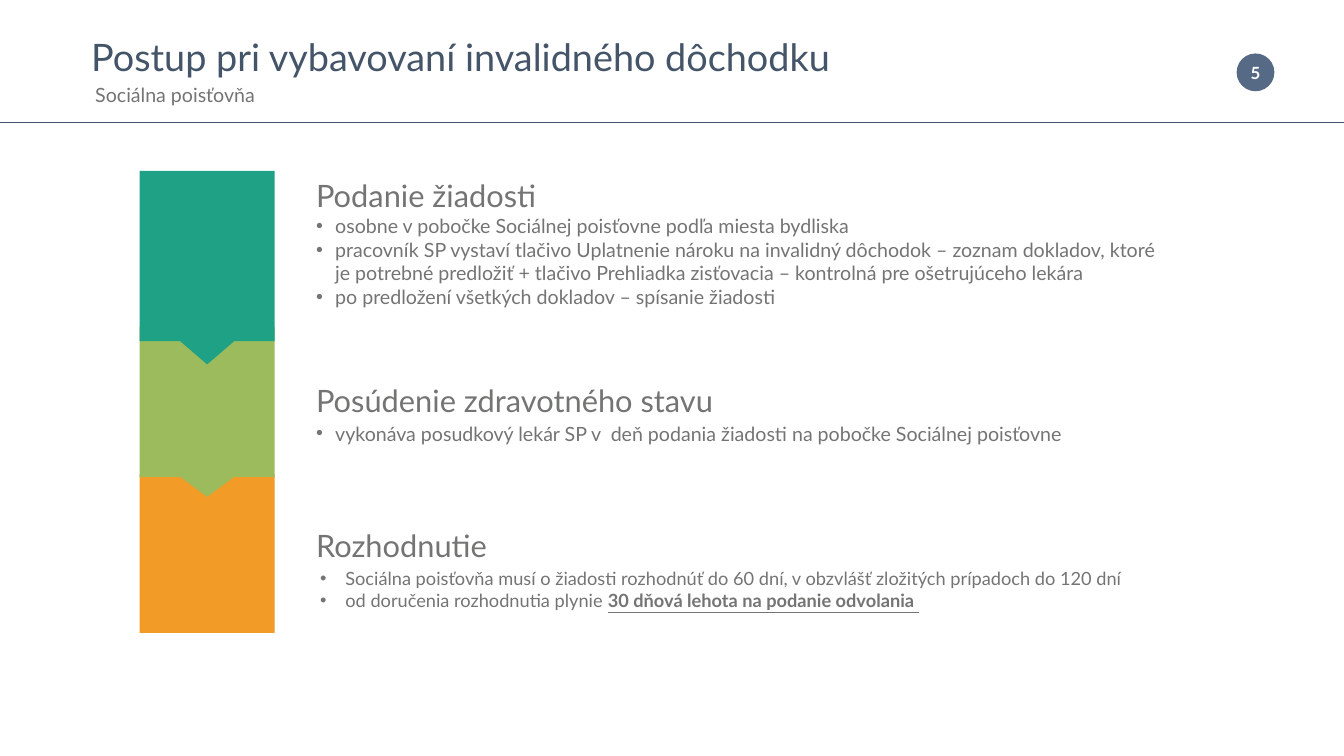
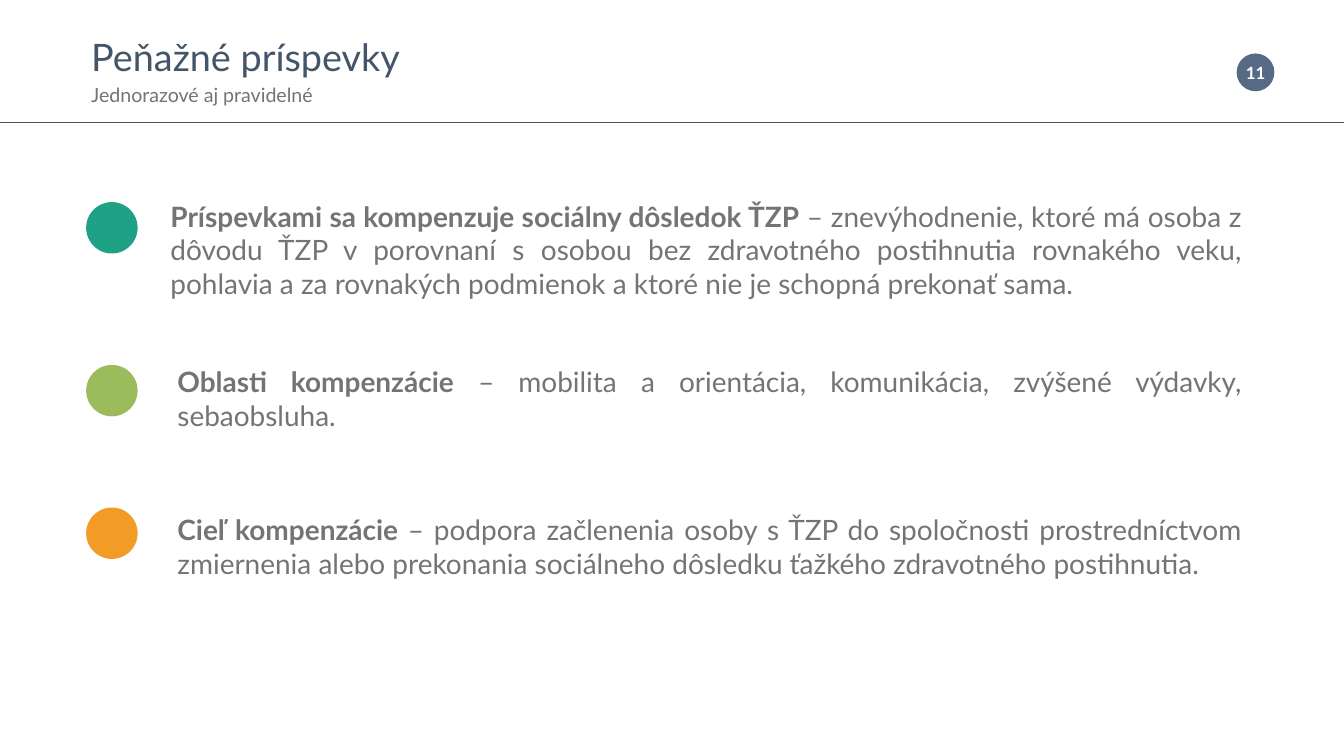
"""Build two slides on invalidity pensions and compensation allowances."""
from dataclasses import dataclass

from lxml import etree
from pptx import Presentation
from pptx.dml.color import RGBColor
from pptx.enum.shapes import MSO_CONNECTOR, MSO_SHAPE
from pptx.enum.text import MSO_ANCHOR, MSO_AUTO_SIZE, PP_ALIGN
from pptx.oxml.ns import qn
from pptx.util import Inches, Pt

LEFT, CENTER, JUSTIFY = PP_ALIGN.LEFT, PP_ALIGN.CENTER, PP_ALIGN.JUSTIFY
TOP, MIDDLE = MSO_ANCHOR.TOP, MSO_ANCHOR.MIDDLE
NO_FIT = MSO_AUTO_SIZE.NONE
OVAL, RECT, STRAIGHT = MSO_SHAPE.OVAL, MSO_SHAPE.RECTANGLE, MSO_CONNECTOR.STRAIGHT


@dataclass(frozen=True)
class Style:
    size: int
    color: str
    align: int = LEFT
    spacing: float = 1.0
    indent: float = 0
    bullet: bool = False


@dataclass(frozen=True)
class Theme:
    font: str = "Lato"
    navy: str = "445469"
    badge: str = "566A86"
    gray: str = "737572"
    white: str = "FFFFFF"
    accents: tuple = ("1EA185", "9BBB5C", "F29B26")


theme = Theme()
STYLES = {
    "title": Style(54, theme.navy, spacing=1.2),
    "subtitle": Style(28, theme.gray, spacing=1.2),
    "shifted": Style(28, theme.gray, spacing=1.2, indent=0.08),
    "number": Style(24, theme.white, CENTER),
    "heading": Style(44, theme.gray, spacing=1.1),
    "item": Style(28, theme.gray, indent=0.38, bullet=True),
    "loose": Style(28, theme.gray, spacing=1.1, indent=0.38, bullet=True),
    "deadline": Style(26, theme.gray, JUSTIFY, indent=0.5, bullet=True),
    "body": Style(40, theme.gray, JUSTIFY),
}

prs = Presentation()
prs.slide_width, prs.slide_height = Inches(26.66), Inches(15)
COL, ROW = prs.slide_width / 100, prs.slide_height / 100


def write(sp, paragraphs, inset=(0.1, 0.05), anchor=TOP):
    """Fill a shape with (style name, runs) pairs; a run is text plus marks."""
    tf = sp.text_frame
    tf.word_wrap, tf.auto_size, tf.vertical_anchor = True, NO_FIT, anchor
    tf.margin_left = tf.margin_right = Inches(inset[0])
    tf.margin_top = tf.margin_bottom = Inches(inset[1])
    for i, (name, runs) in enumerate(paragraphs):
        style = STYLES[name]
        p = tf.add_paragraph() if i else tf.paragraphs[0]
        p.alignment, p.line_spacing = style.align, style.spacing
        p.space_before = p.space_after = Pt(0)
        pPr = p._p.get_or_add_pPr()
        pPr.set("marL", str(Inches(style.indent)))
        pPr.set("indent", str(-Inches(style.indent) if style.bullet else 0))
        if style.bullet:
            etree.SubElement(pPr, qn("a:buChar"), char="•")
        else:
            etree.SubElement(pPr, qn("a:buNone"))
        for text, marks in runs:
            r = p.add_run()
            r.text = text
            r.font.name, r.font.size = theme.font, Pt(style.size)
            r.font.color.rgb = RGBColor.from_string(style.color)
            r.font.bold, r.font.underline = "b" in marks, "u" in marks


def place(sp, box, color=None):
    """Set a shape's box in columns and rows, and its plain fill if given."""
    left, top, width, height = box
    sp.left, sp.width = round(left * COL), round(width * COL)
    sp.top, sp.height = round(top * ROW), round(height * ROW)
    if color:
        sp.fill.solid()
        sp.fill.fore_color.rgb = RGBColor.from_string(color)
        sp.line.fill.background()
        sp.shadow.inherit = False


SLIDES = [
    {
        "number": "5",
        "title_width": 60.17,
        "title": [
            ("title", [("Postup pri vybavovaní invalidného dôchodku", "")]),
            ("shifted", [("Sociálna poisťovňa", "")]),
        ],
        "texts": [
            ((23.14, 22.6, 64.63, 18.67), (0.1, 0.05), TOP, [
                ("heading", [("Podanie žiadosti", "")]),
                ("item", [("osobne v pobočke Sociálnej poisťovne podľa miesta bydliska", "")]),
                ("item", [("pracovník SP vystaví tlačivo Uplatnenie nároku na invalidný "
                           "dôchodok – zoznam dokladov, ktoré je potrebné predložiť + tlačivo "
                           "Prehliadka zisťovacia – kontrolná pre ošetrujúceho lekára", "")]),
                ("item", [("po predložení všetkých dokladov – spísanie žiadosti", "")]),
            ]),
            ((23.14, 49.73, 62.45, 16), (0.1, 0.05), TOP, [
                ("heading", [("Posúdenie zdravotného stavu", "")]),
                ("loose", [("vykonáva posudkový lekár SP v  deň podania žiadosti na pobočke "
                            "Sociálnej poisťovne", "")]),
            ]),
            ((23.82, 67.2, 69.24, 21.47), (0, 0), MIDDLE, [
                ("deadline", [("Sociálna poisťovňa musí o žiadosti rozhodnúť do 60 dní, "
                               "v obzvlášť zložitých prípadoch do 120 dní", "")]),
                ("deadline", [("od doručenia rozhodnutia plynie ", ""),
                              ("30 dňová lehota na podanie odvolania ", "bu")]),
            ]),
            ((23.14, 68.87, 43.44, 5.67), (0.1, 0.05), TOP, [
                ("heading", [("Rozhodnutie", "")]),
            ]),
        ],
    },
    {
        "number": "11",
        "title_width": 50.71,
        "title": [
            ("title", [("Peňažné príspevky", "")]),
            ("subtitle", [("Jednorazové aj pravidelné", "")]),
        ],
        "texts": [
            ((11.93, 25.67, 81.21, 14.8), (0.2, 0.1), TOP, [
                ("body", [("Príspevkami sa kompenzuje sociálny dôsledok ŤZP", "b"),
                          (" – znevýhodnenie, ktoré má osoba z dôvodu ŤZP v porovnaní s osobou "
                           "bez zdravotného postihnutia rovnakého veku, pohlavia a za rovnakých "
                           "podmienok a ktoré nie je schopná prekonať sama.", "")]),
            ]),
            ((12.45, 47.6, 80.68, 10.33), (0.2, 0.1), TOP, [
                ("body", [("Oblasti kompenzácie", "b"),
                          (" – mobilita a orientácia, komunikácia, zvýšené výdavky, "
                           "sebaobsluha.", "")]),
            ]),
            ((12.45, 67.13, 80.68, 14.8), (0.2, 0.1), TOP, [
                ("body", [("Cieľ kompenzácie ", "b"),
                          ("– podpora začlenenia osoby s ŤZP do spoločnosti prostredníctvom "
                           "zmiernenia alebo prekonania sociálneho dôsledku ťažkého zdravotného "
                           "postihnutia.", "")]),
            ]),
        ],
    },
]

for content in SLIDES:
    s = prs.slides.add_slide(prs.slide_layouts[4])
    title, *bodies = s.placeholders
    place(title, (6.41, 2.87, content["title_width"], 11.73))
    write(title, content["title"])
    for sp, (box, inset, anchor, paragraphs) in zip(bodies, content["texts"]):
        place(sp, box)
        write(sp, paragraphs, inset, anchor)
    for sp in bodies[len(content["texts"]):]:
        sp._element.getparent().remove(sp._element)

    badge = s.shapes.add_shape(OVAL, 0, 0, 0, 0)
    place(badge, (92.01, 7.07, 2.81, 5), theme.badge)
    write(badge, [("number", [(content["number"], "b")])], (0, 0), MIDDLE)
    rule_y = round(16.13 * ROW)
    rule = s.shapes.add_connector(STRAIGHT, 0, rule_y, prs.slide_width, rule_y)
    rule.line.width = Pt(1)
    rule.line.color.rgb = RGBColor.from_string(theme.navy)
    etree.SubElement(rule._element.spPr, qn("a:effectLst"))

steps, areas = prs.slides
band_left, band_width = 10.39, 10.05
group = steps.shapes.add_group_shape()
last_band = group.shapes.add_shape(RECT, 0, 0, 0, 0)
place(last_band, (band_left, 62.73, band_width, 21), theme.accents[2])
for color, top, shoulder, tip in [
    (theme.accents[1], 43.2, 63.07, 65.73),
    (theme.accents[0], 22.6, 45.13, 48.2),
]:
    outline = [(0, top), (0, shoulder), (0.3, shoulder), (0.5, tip),
               (0.7, shoulder), (1, shoulder), (1, top)]
    points = [(round((band_left + share * band_width) * COL), round(y * ROW))
              for share, y in outline]
    fb = group.shapes.build_freeform(*points[0])
    fb.add_line_segments(points[1:])
    band = fb.convert_to_shape()
    place(band, (band_left, top, band_width, tip - top), color)

for color, top in zip(theme.accents, (26.73, 48.27, 67.13)):
    dot = areas.shapes.add_shape(OVAL, 0, 0, 0, 0)
    place(dot, (6.41, top, 3.83, 6.8), color)

group_box = (band_left, 22.6, band_width, 61.13)
xfrm = group._element.grpSpPr.get_or_add_xfrm()
for tag, first, second in (("a:off", 0, 1), ("a:chOff", 0, 1), ("a:ext", 2, 3), ("a:chExt", 2, 3)):
    names = ("x", "y") if first == 0 else ("cx", "cy")
    node = xfrm.find(qn(tag))
    node.set(names[0], str(round(group_box[first] * COL)))
    node.set(names[1], str(round(group_box[second] * ROW)))

prs.save("out.pptx")
